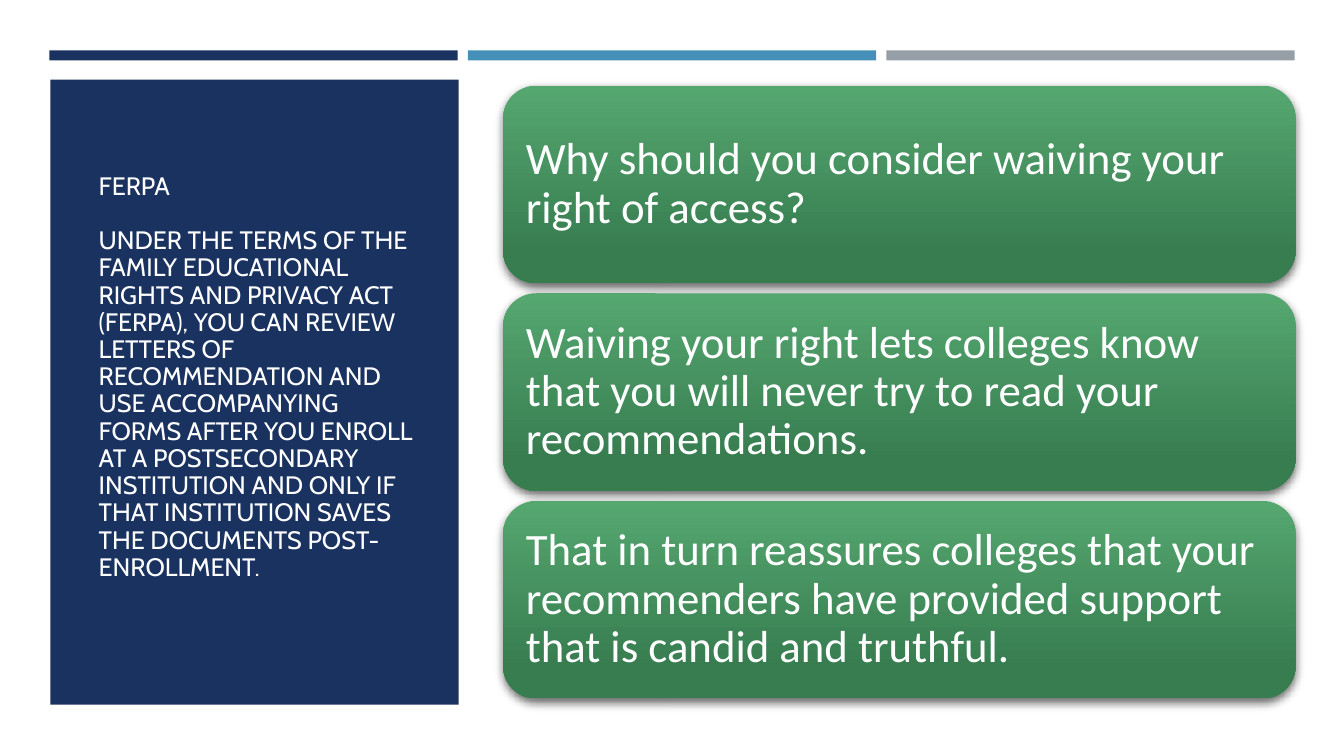
from pptx import Presentation
from pptx.dml.color import RGBColor
from pptx.enum.shapes import MSO_SHAPE
from pptx.enum.text import MSO_ANCHOR, PP_ALIGN
from pptx.util import Emu, Pt
from lxml import etree

RECT = MSO_SHAPE.RECTANGLE
ROUND = MSO_SHAPE.ROUNDED_RECTANGLE
MIDDLE = MSO_ANCHOR.MIDDLE
LEFT = PP_ALIGN.LEFT
NS = "http://schemas.openxmlformats.org/drawingml/2006/main"
SCALE = 9144  # 100 px to the inch

NAVY, BLUE, GREY, WHITE = "1A3260", "4590B8", "969FA7", "FFFFFF"
GREENS = [(0, "55A770"), (0.84, "377D50")]


def px(n):
    return Emu(n * SCALE)


def rgb(code):
    return RGBColor.from_string(code)


def write(frame, *paras, font, size, color=WHITE, inset=(10, 5), gap=0):
    frame.word_wrap = True
    frame.vertical_anchor = MIDDLE
    frame.margin_left = frame.margin_right = px(inset[0])
    frame.margin_top = frame.margin_bottom = px(inset[1])
    for i, text in enumerate(paras):
        para = frame.paragraphs[0] if i == 0 else frame.add_paragraph()
        para.alignment = LEFT
        para.line_spacing = 0.9
        para.space_before = Pt(gap if i else 0)
        run = para.add_run()
        run.text = text
        run.font.name = font
        run.font.size = Pt(size)
        run.font.color.rgb = rgb(color)


class Deck:
    def __init__(self, wide, high):
        self.prs = Presentation()
        self.prs.slide_width, self.prs.slide_height = px(wide), px(high)
        self.slide = self.prs.slides.add_slide(self.prs.slide_layouts[6])
        self.head, self.body = "Cabin", "Calibri"

    def shape(self, kind, *box):
        item = self.slide.shapes.add_shape(kind, *map(px, box))
        item.shadow.inherit = False
        item.line.fill.background()
        return item

    def block(self, color, *box):
        item = self.shape(RECT, *box)
        item.fill.solid()
        item.fill.fore_color.rgb = rgb(color)

    def title(self, *paras, box):
        item = self.slide.shapes.add_textbox(*map(px, box))
        write(item.text_frame, *paras, font=self.head, size=18, gap=19.5)

    def card(self, text, *box):
        item = self.shape(ROUND, *box)
        item.fill.gradient()
        item.fill.gradient_angle = 270
        for stop, (place, color) in zip(item.fill.gradient_stops, GREENS):
            stop.position = place
            stop.color.rgb = rgb(color)
        self.shade(item)
        write(item.text_frame, text, font=self.body, size=32, inset=(13, 13))

    def shade(self, item):
        effects = item.element.spPr.find(f"{{{NS}}}effectLst")
        shadow = etree.SubElement(
            effects, f"{{{NS}}}outerShdw", blurRad=str(Pt(7)),
            dist=str(Pt(3)), dir="5040000", algn="ctr", rotWithShape="0")
        color = etree.SubElement(shadow, f"{{{NS}}}srgbClr", val="000000")
        etree.SubElement(color, f"{{{NS}}}alpha", val="60000")


def main():
    deck = Deck(1333, 750)

    # Left panel with the title
    deck.block(NAVY, 50, 79, 405, 620)
    deck.title(
        "FERPA",
        "UNDER THE TERMS OF THE FAMILY EDUCATIONAL RIGHTS AND PRIVACY ACT "
        "(FERPA), YOU CAN REVIEW LETTERS OF RECOMMENDATION AND USE "
        "ACCOMPANYING FORMS AFTER YOU ENROLL AT A POSTSECONDARY INSTITUTION "
        "AND ONLY IF THAT INSTITUTION SAVES THE DOCUMENTS POST-ENROLLMENT.",
        box=(88, 132, 338, 485))

    # Bars along the top
    for i, color in enumerate((NAVY, BLUE, GREY)):
        deck.block(color, 49 + 415 * i, 50, 405, 10)

    # Green cards
    cards = (
        "Why should you consider waiving your right of access?",
        "Waiving your right lets colleges know that you will never try to "
        "read your recommendations.",
        "That in turn reassures colleges that your recommenders have "
        "provided support that is candid and truthful.",
    )
    for i, text in enumerate(cards):
        deck.card(text, 499, 85 + 206 * i, 786, 196)

    deck.prs.save("out.pptx")


if __name__ == "__main__":
    main()
